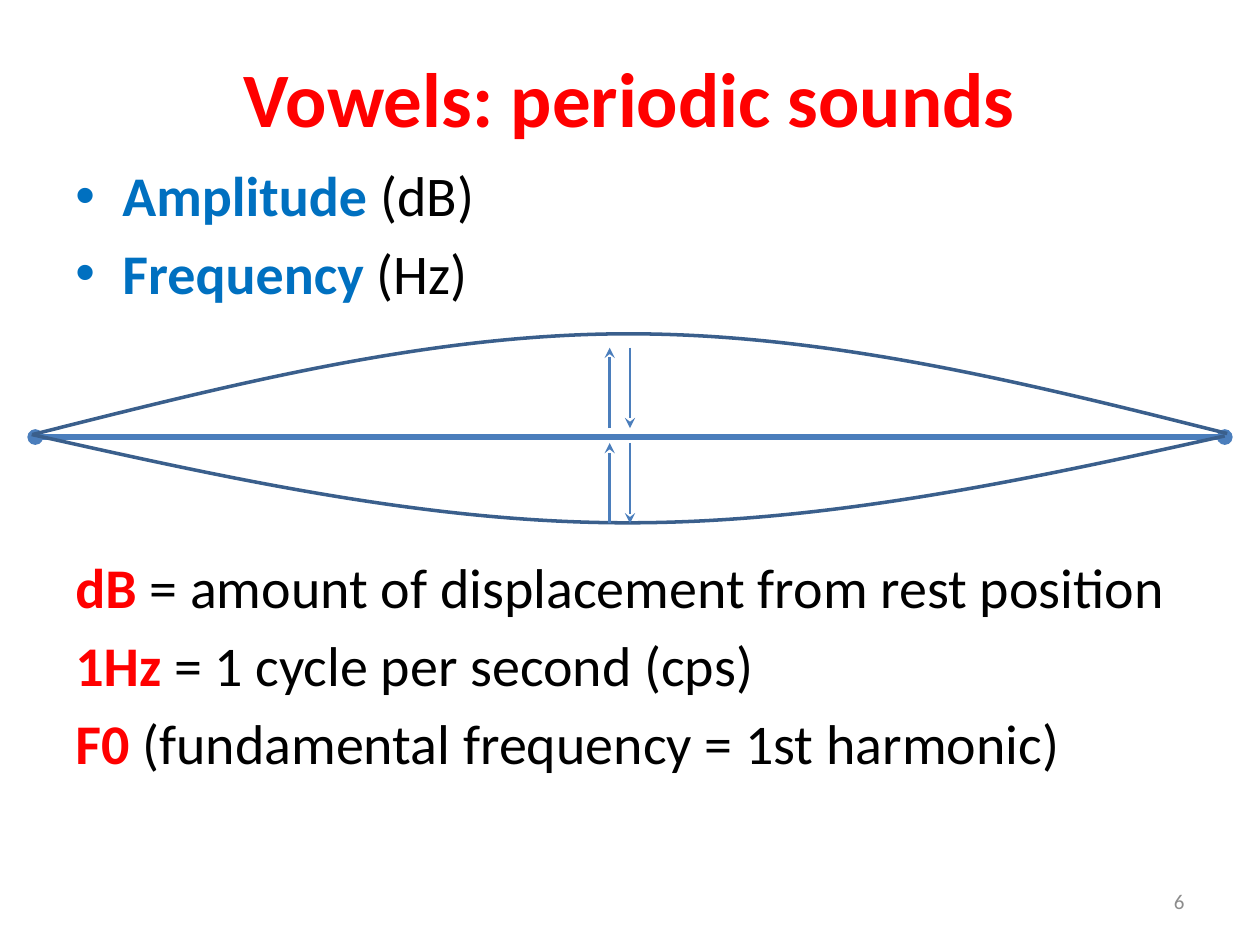
from lxml import etree
from pptx import Presentation
from pptx.dml.color import RGBColor
from pptx.enum.shapes import MSO_CONNECTOR
from pptx.enum.text import MSO_ANCHOR, PP_ALIGN
from pptx.oxml.ns import qn
from pptx.util import Cm, Pt

STRAIGHT = MSO_CONNECTOR.STRAIGHT
LEFT, CENTER, RIGHT = PP_ALIGN.LEFT, PP_ALIGN.CENTER, PP_ALIGN.RIGHT
TOP, MIDDLE = MSO_ANCHOR.TOP, MSO_ANCHOR.MIDDLE

RED, BLUE, BLACK, GREY = "FF0000", "0070C0", "000000", "8C8C8C"
STRING_BLUE, WAVE_BLUE = "4B7EBC", "3A5F8C"

TITLE = "Vowels: periodic sounds"
# (highlighted term, explanation)
MEASURES = [("Amplitude ", "(dB)"), ("Frequency ", "(Hz)")]
DEFINITIONS = [
    ("dB ", "= amount of displacement from rest position"),
    ("1Hz", " = 1 cycle per second (cps)"),
    ("F0 ", "(fundamental frequency = 1st harmonic)"),
]
SLIDE_NUMBER = "6"

# Lengths in cm
MARGIN, TEXT_WIDTH = 1.27, 22.86
REST_Y, STRING_ENDS = 8.81, (0.71, 24.69)
# Start point, then three points for each Bezier segment
WAVES = [
    [(0.66, 8.76), (4.67, 7.75), (8.66, 6.73), (12.67, 6.73),
     (16.69, 6.73), (20.7, 7.72), (24.74, 8.74)],
    [(0.64, 8.76), (4.62, 9.65), (8.64, 10.54), (12.65, 10.54),
     (16.66, 10.54), (20.68, 9.68), (24.69, 8.79)],
]
UP_X, DOWN_X = 12.29, 12.7
ARROW_TOPS, ARROW_LENGTH = (7.01, 8.93), 1.62


def color(hex_string):
    return RGBColor.from_string(hex_string)


def place(shape, left, top, width, height):
    shape.left, shape.top = Cm(left), Cm(top)
    shape.width, shape.height = Cm(width), Cm(height)


def write(shape, paragraphs, size, align=LEFT, anchor=TOP, space=0, bullet=None):
    """Fill a shape with paragraphs, each a list of (text, colour, bold) runs."""
    frame = shape.text_frame
    frame.word_wrap = True
    frame.vertical_anchor = anchor
    for index, runs in enumerate(paragraphs):
        paragraph = frame.add_paragraph() if index else frame.paragraphs[0]
        paragraph.alignment = align
        paragraph.space_before = Pt(space)
        if bullet:
            properties = paragraph._p.get_or_add_pPr()
            properties.set("marL", str(Cm(0.95)))
            properties.set("indent", str(Cm(-0.95)))
            font = etree.SubElement(properties, qn("a:buFont"))
            font.set("typeface", "Arial")
            etree.SubElement(properties, qn("a:buChar")).set("char", bullet)
        for text, hex_string, bold in runs:
            run = paragraph.add_run()
            run.text = text
            run.font.name = "Calibri"
            run.font.size = Pt(size)
            run.font.bold = bold
            run.font.color.rgb = color(hex_string)


def add_text(slide, box, paragraphs, size, **text_format):
    shape = slide.shapes.add_textbox(*map(Cm, box))
    write(shape, paragraphs, size, **text_format)


def term_runs(entries, hex_string):
    return [[(term, hex_string, True), (rest, BLACK, False)] for term, rest in entries]


def add_line(slide, start, end, width, head=None, tail=None):
    line = slide.shapes.add_connector(STRAIGHT, *map(Cm, start + end))
    line.line.color.rgb = color(STRING_BLUE)
    line.line.width = Pt(width)
    outline = line.line._get_or_add_ln()
    for tag, kind in (("a:headEnd", head), ("a:tailEnd", tail)):
        if kind:
            etree.SubElement(outline, qn(tag)).set("type", kind)
    etree.SubElement(line._element.spPr, qn("a:effectLst"))


def add_curve(slide, points):
    """Draw an open Bezier curve through its control points."""
    start, *others = [(Cm(x), Cm(y)) for x, y in points]
    builder = slide.shapes.build_freeform(*start)
    builder.add_line_segments(others, close=False)
    curve = builder.convert_to_shape()
    curve.shadow.inherit = False
    curve.fill.background()
    curve.line.color.rgb = color(WAVE_BLUE)
    curve.line.width = Pt(2)
    segments = list(curve._element.iter(qn("a:lnTo")))
    outline = segments[0].getparent()
    for first in range(0, len(segments), 3):
        bezier = etree.SubElement(outline, qn("a:cubicBezTo"))
        for segment in segments[first:first + 3]:
            bezier.append(segment[0])
            outline.remove(segment)


def main():
    presentation = Presentation()
    presentation.slide_width, presentation.slide_height = Cm(25.4), Cm(19.05)
    slide = presentation.slides.add_slide(presentation.slide_layouts[5])

    title = slide.shapes.title
    place(title, MARGIN, 0.76, TEXT_WIDTH, 2.36)
    write(title, [[(TITLE, RED, True)]], 44, align=CENTER, anchor=MIDDLE)

    add_text(slide, (MARGIN, 3.12, TEXT_WIDTH, 3.3), term_runs(MEASURES, BLUE), 32,
             space=6, bullet="•")
    add_text(slide, (MARGIN, 11.02, TEXT_WIDTH, 5), term_runs(DEFINITIONS, RED), 32,
             space=6)
    add_text(slide, (18.2, 17.66, 5.93, 1.01), [[(SLIDE_NUMBER, GREY, False)]], 12,
             align=RIGHT, anchor=MIDDLE)

    left, right = STRING_ENDS
    add_line(slide, (left, REST_Y), (right, REST_Y), 3, head="oval", tail="oval")
    for points in WAVES:
        add_curve(slide, points)
    for top in ARROW_TOPS:
        bottom = top + ARROW_LENGTH
        add_line(slide, (UP_X, bottom), (UP_X, top), 1.5, tail="stealth")
        add_line(slide, (DOWN_X, top), (DOWN_X, bottom), 1.5, tail="stealth")

    presentation.save("out.pptx")


if __name__ == "__main__":
    main()
